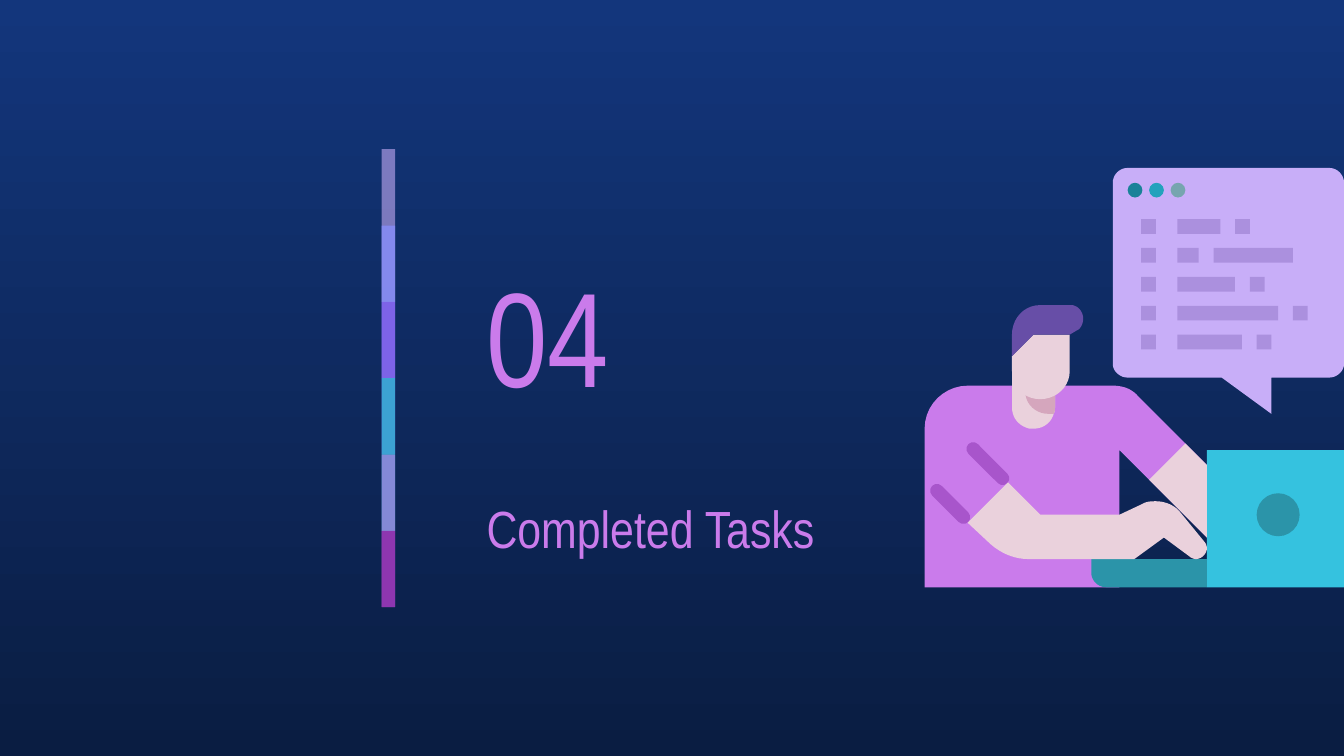
from dataclasses import dataclass

from lxml.etree import SubElement
from pptx import Presentation
from pptx.dml.color import RGBColor
from pptx.enum.shapes import MSO_SHAPE
from pptx.enum.text import MSO_ANCHOR, MSO_AUTO_SIZE, PP_ALIGN
from pptx.oxml.ns import qn
from pptx.util import Inches, Pt


@dataclass(frozen=True)
class Theme:
    """Colours, font and type sizes of the deck."""
    font: str = "Arial Narrow"
    number_size: int = 72
    title_size: int = 28
    bg_top: str = "13367C"
    bg_bottom: str = "0A1D42"
    accent: str = "CA7BEB"
    sleeve: str = "A855CB"
    skin: str = "EAD1DC"
    neck_shade: str = "D5A6BD"
    hair: str = "674EA7"
    laptop: str = "35C2DF"
    laptop_dark: str = "2B94A9"
    window: str = "C8AEF8"
    code: str = "AB90DE"
    dots: tuple = ("198298", "22A2BC", "76A5AF")
    strip: tuple = (("C8AEF8", 59), ("878FFF", 74), ("9154F8", 53),
                    ("35C2DF", 76), ("CA7BEB", 56), ("972CB4", 74))


def bezier(p0, curve, steps=10):
    """Return points along a cubic curve given as (x1, y1, x2, y2, x3, y3)."""
    pts = (p0, curve[:2], curve[2:4], curve[4:])
    points = []
    for i in range(1, steps + 1):
        t = i / steps
        w = ((1 - t) ** 3, 3 * t * (1 - t) ** 2, 3 * t * t * (1 - t), t ** 3)
        points.append(tuple(sum(k * p[axis] for k, p in zip(w, pts)) for axis in (0, 1)))
    return points


class SlideBuilder:
    """Hold the theme and the current slide and draw elements on it."""

    def __init__(self, prs, theme):
        self.theme = theme
        self.s = prs.slides.add_slide(prs.slide_layouts[5])

    def background(self):
        """Fill the slide with the vertical gradient."""
        fill = self.s.background.fill
        fill.gradient()
        fill.gradient_angle = 270
        for stop, color in zip(fill.gradient_stops, (self.theme.bg_top, self.theme.bg_bottom)):
            stop.color.rgb = RGBColor.from_string(color)

    def paint(self, sp, color, alpha=100):
        """Give a shape a flat fill with no line or shadow."""
        sp.shadow.inherit = False
        sp.fill.solid()
        sp.fill.fore_color.rgb = RGBColor.from_string(color)
        sp.line.fill.background()
        if alpha < 100:
            clr = sp._element.spPr.find(".//" + qn("a:srgbClr"))
            SubElement(clr, qn("a:alpha")).set("val", str(alpha * 1000))
        return sp

    def shape(self, kind, x, y, w, h, color, alpha=100):
        """Add a preset shape."""
        sp = self.s.shapes.add_shape(kind, Inches(x), Inches(y), Inches(w), Inches(h))
        return self.paint(sp, color, alpha)

    def rect(self, *args):
        """Add a rectangle."""
        return self.shape(MSO_SHAPE.RECTANGLE, *args)

    def circle(self, x, y, size, color):
        """Add a circle."""
        return self.shape(MSO_SHAPE.OVAL, x, y, size, size, color)

    def stripe(self, cx, cy, length, color):
        """Add a round-ended stripe sloping down at 45 degrees."""
        sp = self.shape(MSO_SHAPE.ROUNDED_RECTANGLE, cx - length / 2, cy - 0.05, length, 0.1, color)
        sp.adjustments[0] = 0.5
        sp.rotation = 45

    def outline(self, color, *path):
        """Add a closed outline of points and six-number curves."""
        points = [path[0]]
        for step in path[1:]:
            points += [step] if len(step) == 2 else bezier(points[-1], step)
        emu = [(Inches(x), Inches(y)) for x, y in points]
        fb = self.s.shapes.build_freeform(*emu[0])
        fb.add_line_segments(emu[1:], close=True)
        return self.paint(fb.convert_to_shape(), color)

    def text(self, sp, text, size, x, y, w, h):
        """Place and format a title or text box."""
        sp.left, sp.top, sp.width, sp.height = (Inches(v) for v in (x, y, w, h))
        tf = sp.text_frame
        tf.text = text
        tf.word_wrap = True
        tf.auto_size = MSO_AUTO_SIZE.NONE
        tf.vertical_anchor = MSO_ANCHOR.MIDDLE
        tf.margin_left = tf.margin_right = tf.margin_top = tf.margin_bottom = Inches(0.1)
        p = tf.paragraphs[0]
        p.alignment = PP_ALIGN.LEFT
        p.font.name = self.theme.font
        p.font.size = Pt(size)
        p.font.color.rgb = RGBColor.from_string(self.theme.accent)

    def color_strip(self):
        """Draw the overlapping translucent bars."""
        last = len(self.theme.strip) - 1
        pitch = 2.84 / last
        for i, (color, alpha) in enumerate(self.theme.strip):
            self.rect(2.84, 1.11 + pitch * i, 0.1, pitch if i == last else 2 * pitch, color, alpha)

    def headings(self):
        """Write the section number and the title."""
        box = self.s.shapes.add_textbox(0, 0, 0, 0)
        self.text(box, "04", self.theme.number_size, 3.52, 1.81, 1.75, 1.35)
        self.text(self.s.shapes.title, "Completed Tasks", self.theme.title_size, 3.52, 3.59, 2.87, 0.67)

    def person(self):
        """Draw the body, the arms and the laptop."""
        t = self.theme
        self.outline(t.accent, (7.2, 2.87), (7.03, 2.87, 6.88, 3.01, 6.88, 3.19), (6.88, 4.37),
                     (8.33, 4.37), (8.33, 3.35), (8.98, 4), (8.98, 3.46), (8.47, 2.95),
                     (8.42, 2.89, 8.35, 2.87, 8.28, 2.87))
        self.stripe(7.07, 3.75, 0.38, t.sleeve)
        self.stripe(7.35, 3.45, 0.41, t.sleeve)
        self.rect(8.98, 3.35, 1.02, 1.02, t.laptop)
        self.outline(t.laptop_dark, (8.12, 4.16), (8.12, 4.26), (8.12, 4.32, 8.17, 4.37, 8.23, 4.37),
                     (8.98, 4.37), (8.98, 4.16))
        self.outline(t.skin, (7.53, 2.71), (7.53, 3.03), (7.53, 3.11, 7.58, 3.17, 7.66, 3.19),
                     (7.67, 3.19, 7.68, 3.19, 7.69, 3.19), (7.76, 3.19, 7.82, 3.15, 7.84, 3.08),
                     (7.85, 3.06, 7.85, 3.05, 7.85, 3.03), (7.85, 2.71))
        self.outline(t.neck_shade, (7.63, 2.71), (7.63, 2.92), (7.63, 3.01, 7.71, 3.08, 7.8, 3.08),
                     (7.84, 3.08), (7.85, 3.06, 7.85, 3.05, 7.85, 3.03), (7.85, 2.71))
        self.outline(t.skin, (7.5, 3.59), (7.2, 3.89), (7.35, 4.03), (7.43, 4.11, 7.54, 4.16, 7.65, 4.16),
                     (8.44, 4.16), (8.66, 4), (8.85, 4.14), (8.86, 4.15, 8.88, 4.16, 8.9, 4.16),
                     (8.94, 4.16, 8.98, 4.12, 8.98, 4.08), (8.98, 4.06, 8.97, 4.04, 8.96, 4.03),
                     (8.78, 3.81), (8.74, 3.76, 8.67, 3.73, 8.6, 3.73),
                     (8.57, 3.73, 8.53, 3.73, 8.5, 3.75), (8.33, 3.83), (7.74, 3.83))
        self.outline(t.skin, (8.82, 3.3), (8.55, 3.57), (8.98, 4), (8.98, 3.46))
        self.circle(9.35, 3.67, 0.32, t.laptop_dark)

    def code_window(self):
        """Draw the speech bubble with its lines of code."""
        t = self.theme
        self.outline(t.window, (8.39, 1.25), (8.33, 1.25, 8.28, 1.3, 8.28, 1.36), (8.28, 2.71),
                     (8.28, 2.76, 8.33, 2.81, 8.39, 2.81), (9.09, 2.81), (9.46, 3.08), (9.46, 2.81),
                     (9.89, 2.81), (9.95, 2.81, 10, 2.76, 10, 2.71), (10, 1.36),
                     (10, 1.3, 9.95, 1.25, 9.89, 1.25))
        rows = ((0.32, 0.11), (0.16, 0.59), (0.43, 0.11), (0.75, 0.11), (0.48, 0.11))
        pitch = 0.86 / (len(rows) - 1)
        for i, (first, second) in enumerate(rows):
            for x, w in ((8.49, 0.11), (8.76, first), (8.87 + first, second)):
                self.rect(x, 1.63 + pitch * i, w, 0.11, t.code)
        for i, color in enumerate(t.dots):
            self.circle(8.39 + 0.16 * i, 1.36, 0.11, color)

    def head(self):
        """Draw the face and the hair."""
        t = self.theme
        self.outline(t.skin, (7.69, 2.49), (7.53, 2.65), (7.53, 2.76), (7.53, 2.88, 7.62, 2.97, 7.74, 2.97),
                     (7.86, 2.97, 7.96, 2.88, 7.96, 2.76), (7.96, 2.49))
        self.outline(t.hair, (7.74, 2.27), (7.62, 2.27, 7.53, 2.37, 7.53, 2.49), (7.53, 2.65), (7.69, 2.49),
                     (7.96, 2.49), (8.01, 2.46), (8.04, 2.45, 8.06, 2.41, 8.06, 2.37),
                     (8.06, 2.32, 8.02, 2.27, 7.97, 2.27))


def main():
    """Build and save the 16:9 slide."""
    prs = Presentation()
    prs.slide_width = Inches(10)
    prs.slide_height = Inches(10) * 9 // 16
    builder = SlideBuilder(prs, Theme())
    builder.background()
    builder.color_strip()
    builder.headings()
    builder.person()
    builder.code_window()
    builder.head()
    prs.save("out.pptx")


if __name__ == "__main__":
    main()
